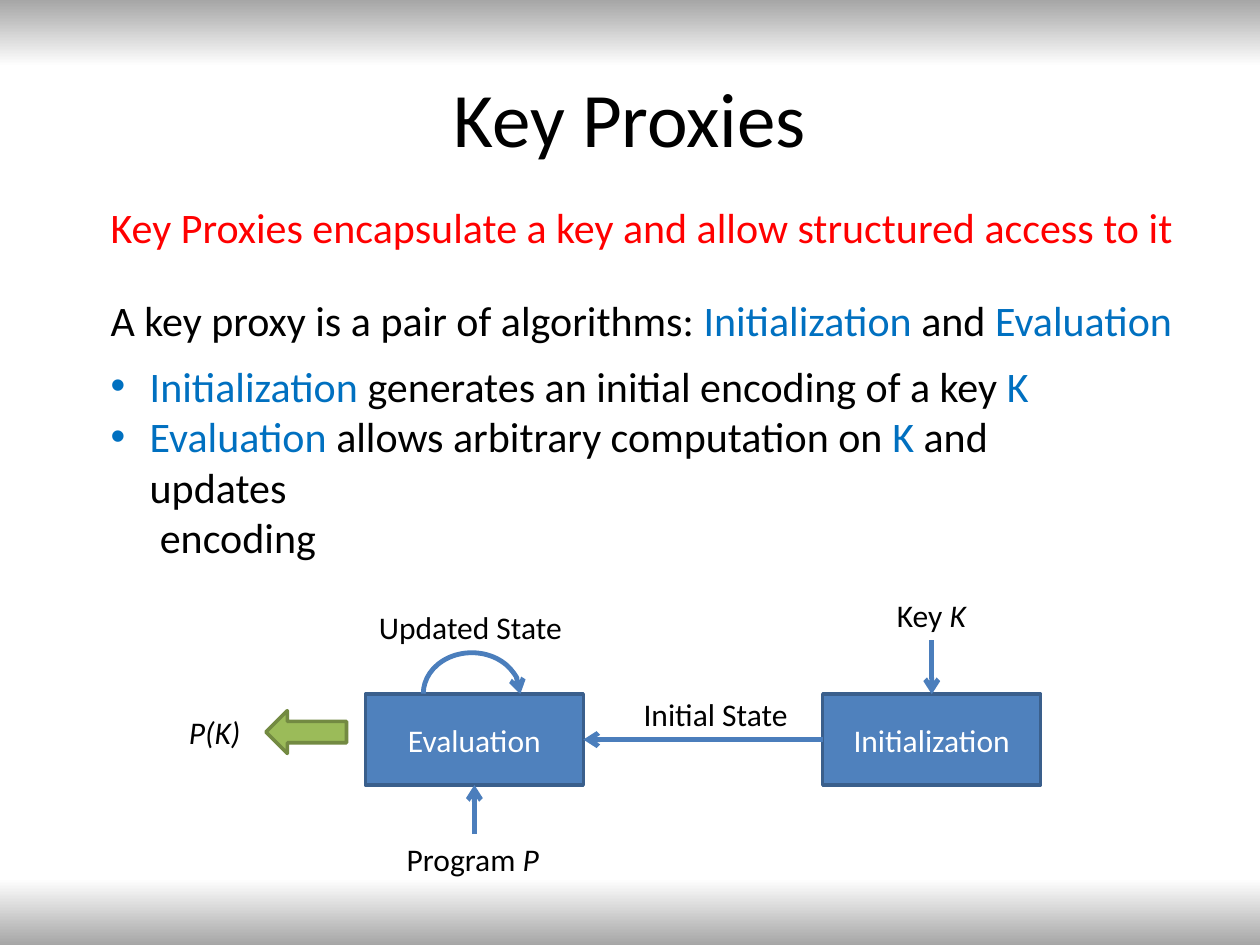
from copy import deepcopy

from pptx import Presentation
from pptx.dml.color import RGBColor
from pptx.enum.shapes import MSO_CONNECTOR, MSO_SHAPE
from pptx.enum.text import MSO_ANCHOR, PP_ALIGN
from pptx.oxml.ns import qn
from pptx.oxml.xmlchemy import OxmlElement
from pptx.util import Inches, Pt

BLACK = RGBColor(0x00, 0x00, 0x00)
WHITE = RGBColor(0xFF, 0xFF, 0xFF)
GREY = RGBColor(0xA6, 0xA6, 0xA6)
RED = RGBColor(0xFF, 0x00, 0x00)
TERM_BLUE = RGBColor(0x00, 0x70, 0xC0)
BOX_BLUE = RGBColor(0x4F, 0x81, 0xBD)
BOX_EDGE = RGBColor(0x3A, 0x5F, 0x8C)
ARROW_BLUE = RGBColor(0x4B, 0x7E, 0xBC)
GREEN = RGBColor(0x9B, 0xBB, 0x59)
GREEN_EDGE = RGBColor(0x73, 0x8A, 0x42)

FONT = "Calibri"


def set_background(s):
    fill = s.background.fill
    fill.gradient()
    fill.gradient_angle = 90
    stop_list = s.element.find(".//" + qn("a:gsLst"))
    for stop in list(stop_list):
        stop_list.append(deepcopy(stop))
    stops = [(0, GREY), (0.07, WHITE), (0.93, WHITE), (1, GREY)]
    for stop, (position, color) in zip(fill.gradient_stops, stops):
        stop.position = position
        stop.color.rgb = color


def add_runs(p, runs, size):
    """Each run is (text, color) or (text, color, italic)."""
    for text, color, *italic in runs:
        r = p.add_run()
        r.text = text
        r.font.name = FONT
        r.font.size = Pt(size)
        r.font.color.rgb = color
        if italic:
            r.font.italic = italic[0]


def add_text(s, x, y, w, h, runs, size, wrap=False):
    tb = s.shapes.add_textbox(Inches(x), Inches(y), Inches(w), Inches(h))
    tf = tb.text_frame
    tf.word_wrap = wrap
    add_runs(tf.paragraphs[0], runs, size)
    return tb


def set_indent(p, margin, bullet_color=None):
    """Indent a paragraph, with a hanging bullet if a colour is given."""
    pPr = p._p.get_or_add_pPr()
    pPr.set("marL", str(Inches(margin)))
    if bullet_color is None:
        return
    pPr.set("indent", str(-Inches(margin)))
    color = OxmlElement("a:buClr")
    rgb = OxmlElement("a:srgbClr")
    rgb.set("val", str(bullet_color))
    color.append(rgb)
    font = OxmlElement("a:buFont")
    font.set("typeface", "Arial")
    char = OxmlElement("a:buChar")
    char.set("char", "•")
    pPr.extend([color, font, char])


def add_bullets(s, x, y, w, h, items, size):
    """Each item is (runs, margin, bullet colour or None)."""
    tb = s.shapes.add_textbox(Inches(x), Inches(y), Inches(w), Inches(h))
    tf = tb.text_frame
    tf.word_wrap = True
    for i, (runs, margin, bullet_color) in enumerate(items):
        p = tf.add_paragraph() if i else tf.paragraphs[0]
        set_indent(p, margin, bullet_color)
        add_runs(p, runs, size)


def add_block(s, kind, x, y, w, h, fill, edge):
    sp = s.shapes.add_shape(kind, Inches(x), Inches(y), Inches(w), Inches(h))
    sp.shadow.inherit = False
    sp.fill.solid()
    sp.fill.fore_color.rgb = fill
    sp.line.color.rgb = edge
    sp.line.width = Pt(2)
    return sp


def add_step(s, x, label):
    sp = add_block(s, MSO_SHAPE.RECTANGLE, x, 5.51, 1.73, 0.72, BOX_BLUE, BOX_EDGE)
    tf = sp.text_frame
    tf.vertical_anchor = MSO_ANCHOR.MIDDLE
    p = tf.paragraphs[0]
    p.alignment = PP_ALIGN.CENTER
    add_runs(p, [(label, WHITE)], 18)
    return sp


def style_arrow(shape):
    shape.line.color.rgb = ARROW_BLUE
    shape.line.width = Pt(2.75)
    head = OxmlElement("a:tailEnd")
    head.set("type", "arrow")
    shape.element.spPr.find(qn("a:ln")).append(head)


def add_arrow(s, start, start_side, end, end_side):
    line = s.shapes.add_connector(MSO_CONNECTOR.STRAIGHT, 0, 0, 0, 0)
    line.begin_connect(start, start_side)
    line.end_connect(end, end_side)
    style_arrow(line)
    line.element.spPr.append(OxmlElement("a:effectLst"))


def add_loop(s):
    loop = s.shapes.add_shape(MSO_SHAPE.ARC, Inches(3.42), Inches(5.12),
                              Inches(0.65), Inches(0.77))
    loop.adjustments[0] = 162
    loop.adjustments[1] = 54.27
    loop.rotation = 270
    loop.fill.background()
    style_arrow(loop)
    loop.shadow.inherit = False


def add_diagram(s):
    # Steps
    initialization = add_step(s, 6.53, "Initialization")
    evaluation = add_step(s, 2.9, "Evaluation")

    # Labels
    key = add_text(s, 7.02, 4.68, 0.75, 0.4,
                   [("Key ", BLACK), ("K", BLACK, True)], 18)
    program = add_text(s, 3.13, 6.62, 1.27, 0.4,
                       [("Program ", BLACK), ("P", BLACK, True)], 18)
    add_text(s, 5.01, 5.47, 1.36, 0.4, [("Initial State", BLACK)], 18)
    add_text(s, 2.91, 4.78, 1.67, 0.4, [("Updated State", BLACK)], 18)
    add_text(s, 1.4, 5.61, 0.62, 0.4, [("P(K)", BLACK, True)], 18)

    # Arrows
    add_arrow(s, key, 2, initialization, 0)
    add_arrow(s, initialization, 1, evaluation, 3)
    add_arrow(s, program, 0, evaluation, 2)
    add_loop(s)
    output = add_block(s, MSO_SHAPE.RIGHT_ARROW, 2.11, 5.64, 0.64, 0.34,
                       GREEN, GREEN_EDGE)
    output.rotation = 180


def main():
    prs = Presentation()
    prs.slide_width, prs.slide_height = Inches(10), Inches(7.5)
    s = prs.slides.add_slide(prs.slide_layouts[6])
    set_background(s)

    # Title
    title = add_text(s, 0.5, 0.3, 9, 1.25, [("Key Proxies", BLACK)], 44, wrap=True)
    title.text_frame.vertical_anchor = MSO_ANCHOR.MIDDLE
    title.text_frame.paragraphs[0].alignment = PP_ALIGN.CENTER

    # Statements, in boxes wide enough for one line each
    add_text(s, 0.78, 1.55, 8.75, 0.51,
             [("Key Proxies encapsulate a key and allow structured access to it", RED)],
             24, wrap=True)
    add_text(s, 0.78, 2.29, 8.75, 0.51,
             [("A key proxy is a pair of algorithms: ", BLACK), ("Initialization", TERM_BLUE),
              (" and ", BLACK), ("Evaluation", TERM_BLUE)], 24, wrap=True)

    # The two algorithms
    add_bullets(s, 0.78, 2.81, 8.28, 1.72, [
        ([("Initialization", TERM_BLUE), (" generates an initial encoding of a key ", BLACK),
          ("K", TERM_BLUE)], 0.31, TERM_BLUE),
        ([("Evaluation", TERM_BLUE), (" allows arbitrary computation on ", BLACK),
          ("K", TERM_BLUE), (" and updates", BLACK)], 0.31, TERM_BLUE),
        ([("encoding", BLACK)], 0.39, None),
    ], 24)

    add_diagram(s)
    prs.save("out.pptx")


if __name__ == "__main__":
    main()
